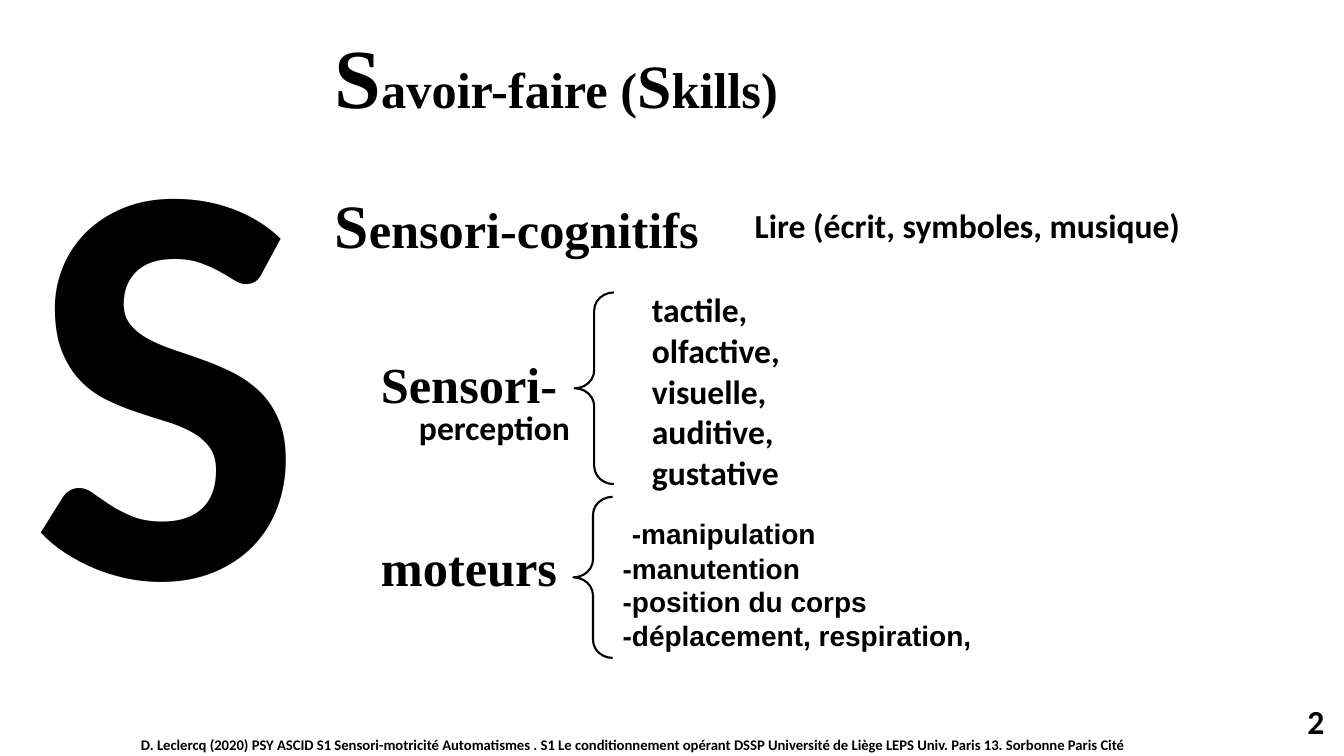
"""Build the slide on sensori-motor skills (savoir-faire)."""
from typing import NamedTuple

from pptx import Presentation
from pptx.dml.color import RGBColor
from pptx.enum.shapes import MSO_SHAPE
from pptx.enum.text import MSO_ANCHOR, MSO_AUTO_SIZE as AutoSize, PP_ALIGN
from pptx.slide import Slide
from pptx.util import Cm, Pt

BLACK = RGBColor(0x00, 0x00, 0x00)
WHITE = RGBColor(0xFF, 0xFF, 0xFF)
SERIF, SANS, BODY = "Times New Roman", "Arial", "Calibri"
LINE_RATIO = 1.21
BLANK_LAYOUT = 6


class Span(NamedTuple):
    text: str
    size: float


class Line(NamedTuple):
    spans: list[Span]
    gap: float = 0


class Area(NamedTuple):
    left: float
    top: float
    width: float
    height: float


class Label(NamedTuple):
    area: Area
    font: str
    lines: list[Line]
    filled: bool = False
    wrap: bool = False
    grow: bool = True
    anchor: MSO_ANCHOR = MSO_ANCHOR.TOP
    align: PP_ALIGN = PP_ALIGN.LEFT


def plain(size: float, *texts: str) -> list[Line]:
    """Return one line per text, all in the same size."""
    return [Line([Span(text, size)]) for text in texts]


LABELS = [
    Label(Area(8.18, 0.46, 11.81, 6.25), SERIF, [
        Line([Span("S", 60), Span("avoir-faire (", 36), Span("S", 44), Span("kills)", 36)]),
        Line([Span("S", 44), Span("ensori-cognitifs", 36)], gap=36 * LINE_RATIO),
    ], filled=True),
    Label(Area(15.44, 12.73, 11.51, 3.84), SANS, [
        Line([Span(" ", 24), Span("-manipulation", 20)]),
        *plain(20, "-manutention", "-position du corps", "-déplacement, respiration,"),
    ], filled=True, wrap=True),
    Label(Area(0.53, -0.25, 7.47, 17.91), BODY, plain(413, "S")),
    Label(Area(0.18, 18.24, 31.55, 1.02), BODY, plain(
        10.5,
        "D. Leclercq (2020) PSY ASCID S1 Sensori-motricité Automatismes . "
        "S1 Le conditionnement opérant DSSP Université de Liège "
        "LEPS Univ. Paris 13. Sorbonne Paris Cité",
    ), wrap=True, grow=False, anchor=MSO_ANCHOR.MIDDLE, align=PP_ALIGN.CENTER),
    Label(Area(31.55, 17.65, 2.08, 1.02), BODY, plain(24, "2"),
          wrap=True, grow=False, anchor=MSO_ANCHOR.MIDDLE, align=PP_ALIGN.RIGHT),
    Label(Area(9.35, 8.76, 5.33, 6.4), SERIF, [
        Line([Span("Sensori-", 36)]),
        Line([Span("moteurs", 36)], gap=2 * 36 * LINE_RATIO),
    ]),
    Label(Area(16.18, 7.16, 3.96, 5.38), BODY,
          plain(24, "tactile,", "olfactive,", "visuelle,", "auditive,", "gustative")),
    Label(Area(10.31, 10.13, 4.37, 1.27), BODY, plain(24, "perception")),
    Label(Area(18.77, 5.03, 11.35, 1.27), BODY, plain(24, "Lire (écrit, symboles, musique)")),
]
BRACES = [Area(14.48, 7.37, 0.99, 4.83), Area(14.45, 12.52, 0.99, 4.06)]


def add_label(page: Slide, label: Label) -> None:
    """Draw one text box with its lines."""
    box = page.shapes.add_textbox(*map(Cm, label.area))
    if label.filled:
        box.fill.solid()
        box.fill.fore_color.rgb = WHITE
    frame = box.text_frame
    frame.word_wrap = label.wrap
    frame.auto_size = AutoSize.SHAPE_TO_FIT_TEXT if label.grow else AutoSize.NONE
    frame.vertical_anchor = label.anchor
    for index, line in enumerate(label.lines):
        para = frame.add_paragraph() if index else frame.paragraphs[0]
        sizes = [span.size for span in line.spans]
        para.alignment = label.align
        para.line_spacing = Pt(max(sizes) * LINE_RATIO)
        para.space_before = Pt(line.gap)
        para.font.name = label.font
        para.font.bold = True
        para.font.color.rgb = BLACK
        para.font.size = Pt(max(sizes))
        for span in line.spans:
            run = para.add_run()
            run.text = span.text
            if len(set(sizes)) > 1:
                run.font.size = Pt(span.size)


def add_brace(page: Slide, area: Area) -> None:
    """Draw one left brace."""
    brace = page.shapes.add_shape(MSO_SHAPE.LEFT_BRACE, *map(Cm, area))
    brace.adjustments[0] = 0.46
    brace.adjustments[1] = 0.5
    brace.shadow.inherit = False
    brace.fill.background()
    brace.line.color.rgb = BLACK
    brace.line.width = Pt(1.5)


def main() -> None:
    """Create the deck and save it."""
    deck = Presentation()
    deck.slide_width, deck.slide_height = Cm(33.87), Cm(19.05)
    page = deck.slides.add_slide(deck.slide_layouts[BLANK_LAYOUT])
    for label in LABELS:
        add_label(page, label)
    for area in BRACES:
        add_brace(page, area)
    deck.save("out.pptx")


if __name__ == "__main__":
    main()
